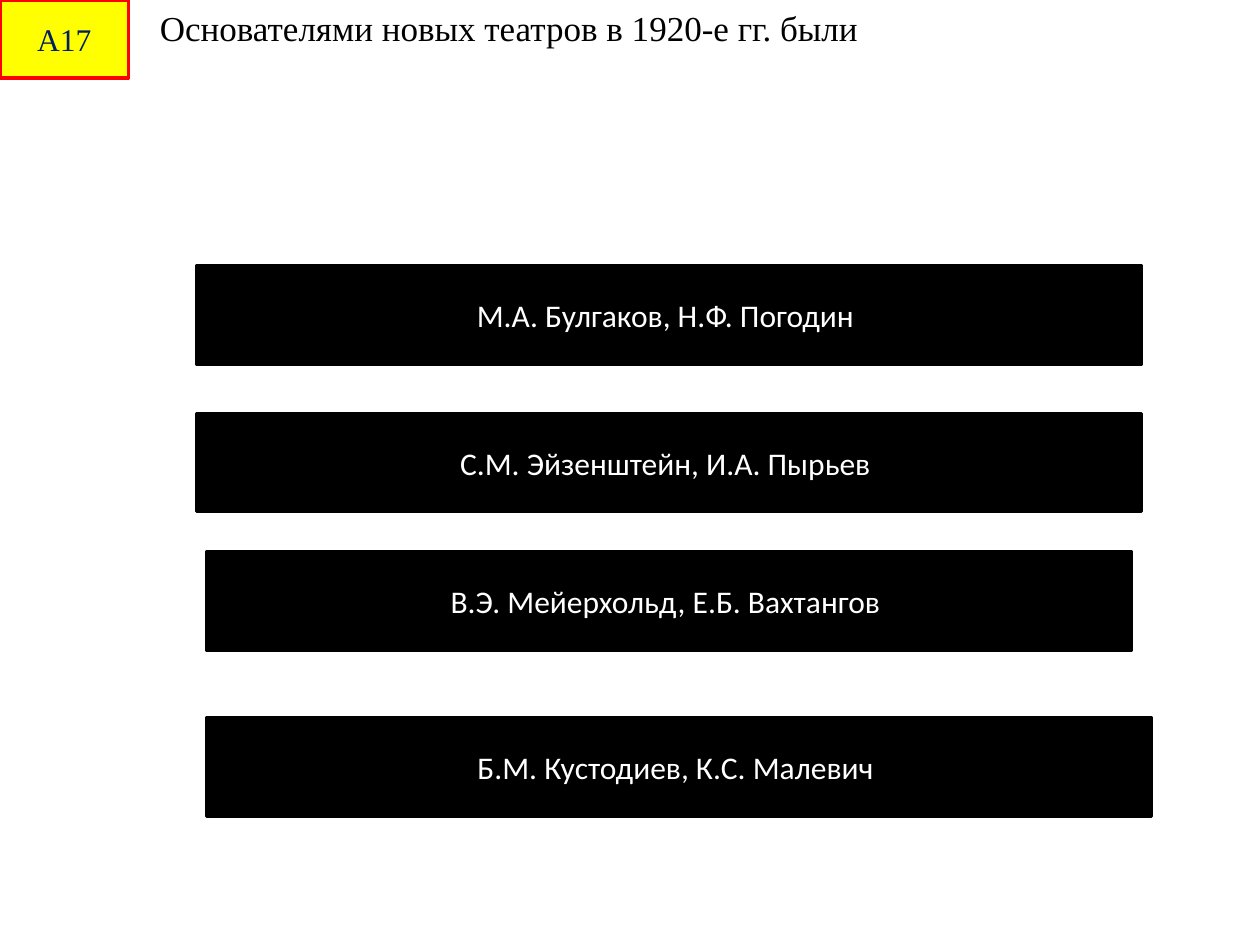
from dataclasses import dataclass

from pptx import Presentation
from pptx.dml.color import RGBColor
from pptx.enum import shapes, text
from pptx import util as u

HUES = {
    "yellow": "FFFF00",
    "red": "FF0000",
    "navy": "002060",
    "black": "000000",
    "white": "FFFFFF",
}
KINDS = shapes.MSO_SHAPE
BACK = KINDS.ACTION_BUTTON_BACK_OR_PREVIOUS
NEXT = KINDS.ACTION_BUTTON_FORWARD_OR_NEXT
SERIF = {"name": "Times New Roman", "size": u.Pt(18)}
SANS = {"name": "Calibri", "size": u.Pt(18)}


@dataclass
class Box:
    words: str
    left: float
    top: float
    width: float = 7.5
    height: float = 0.78
    kind: shapes.MSO_SHAPE = BACK
    fill: str = "black"
    line: str = "black"
    ink: str = "white"


def hue(name: str) -> RGBColor:
    return RGBColor.from_string(HUES[name])


def write(frame, words: str, ink: str, style: dict) -> None:
    frame.word_wrap = True
    run = frame.paragraphs[0].add_run()
    run.text = words
    for key, value in style.items():
        setattr(run.font, key, value)
    run.font.color.rgb = hue(ink)


def draw(slide, box: Box, style: dict) -> None:
    place = map(u.Inches, (box.left, box.top, box.width, box.height))
    shape = slide.shapes.add_shape(box.kind, *place)
    shape.shadow.inherit = False
    shape.fill.solid()
    shape.fill.fore_color.rgb = hue(box.fill)
    shape.line.color.rgb = hue(box.line)
    shape.line.width = u.Pt(2)
    frame = shape.text_frame
    frame.vertical_anchor = text.MSO_ANCHOR.MIDDLE
    frame.paragraphs[0].alignment = text.PP_ALIGN.CENTER
    write(frame, box.words, box.ink, style)


def ask(slide, words: str) -> None:
    place = map(u.Inches, (1.17, 0, 8.83, 0.44))
    frame = slide.shapes.add_textbox(*place).text_frame
    frame.auto_size = text.MSO_AUTO_SIZE.SHAPE_TO_FIT_TEXT
    write(frame, words, "black", {**SERIF, "size": u.Pt(20)})


def main() -> None:
    deck = Presentation()
    deck.slide_width, deck.slide_height = u.Inches(10), u.Inches(7.5)
    slide = deck.slides.add_slide(deck.slide_layouts[6])

    badge = Box("А17", 0, 0, 1.02, 0.62, KINDS.RECTANGLE, "yellow", "red", "navy")
    draw(slide, badge, SERIF)
    ask(slide, "Основателями новых театров в 1920-е гг. были")

    answers = [
        Box("В.Э. Мейерхольд, Е.Б. Вахтангов ", 1.64, 4.38, width=7.34, kind=NEXT),
        Box("С.М. Эйзенштейн, И.А. Пырьев ", 1.56, 3.28),
        Box("М.А. Булгаков, Н.Ф. Погодин ", 1.56, 2.11),
        Box("Б.М. Кустодиев, К.С. Малевич ", 1.64, 5.7),
    ]
    for answer in answers:
        draw(slide, answer, SANS)

    deck.save("out.pptx")


if __name__ == "__main__":
    main()
